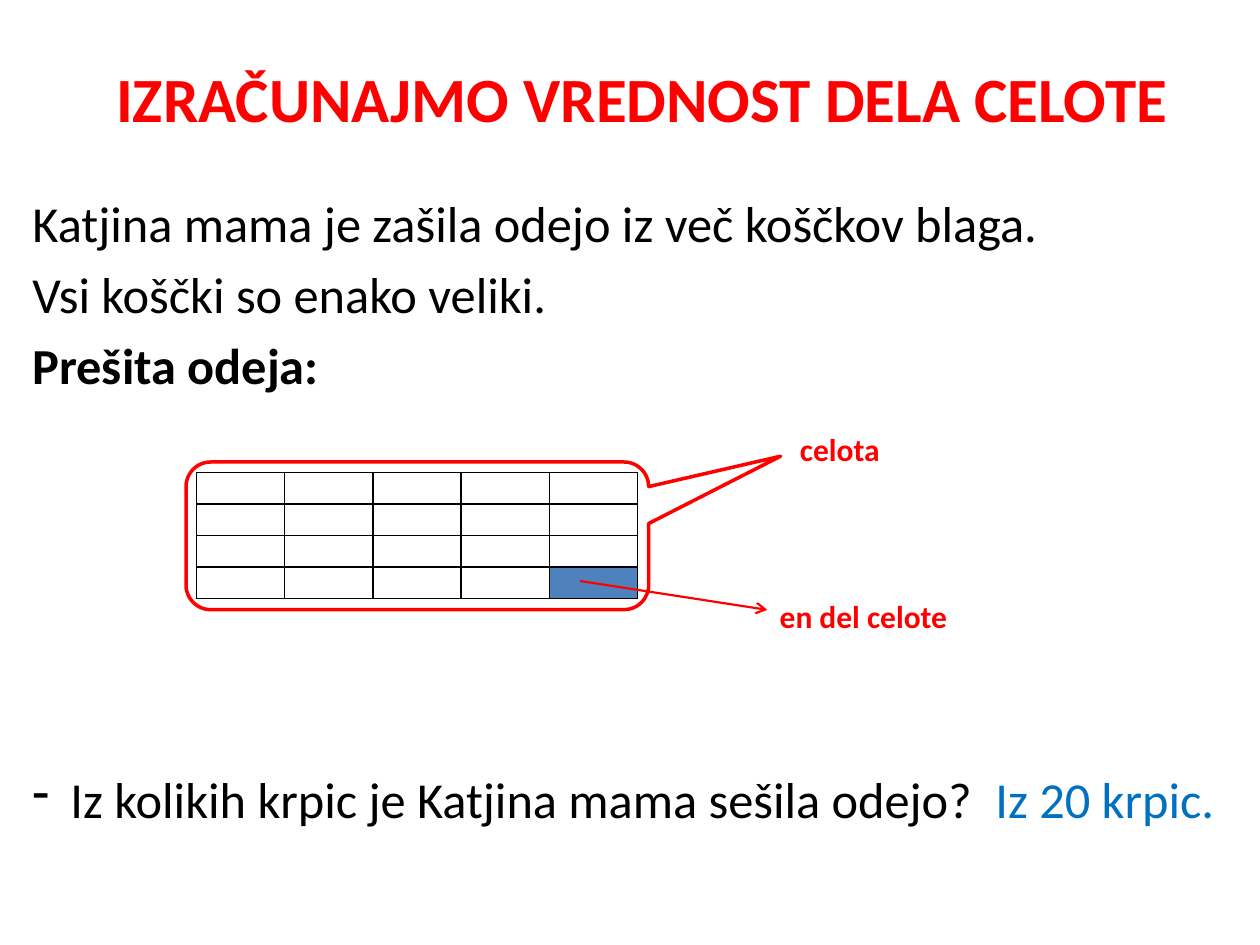
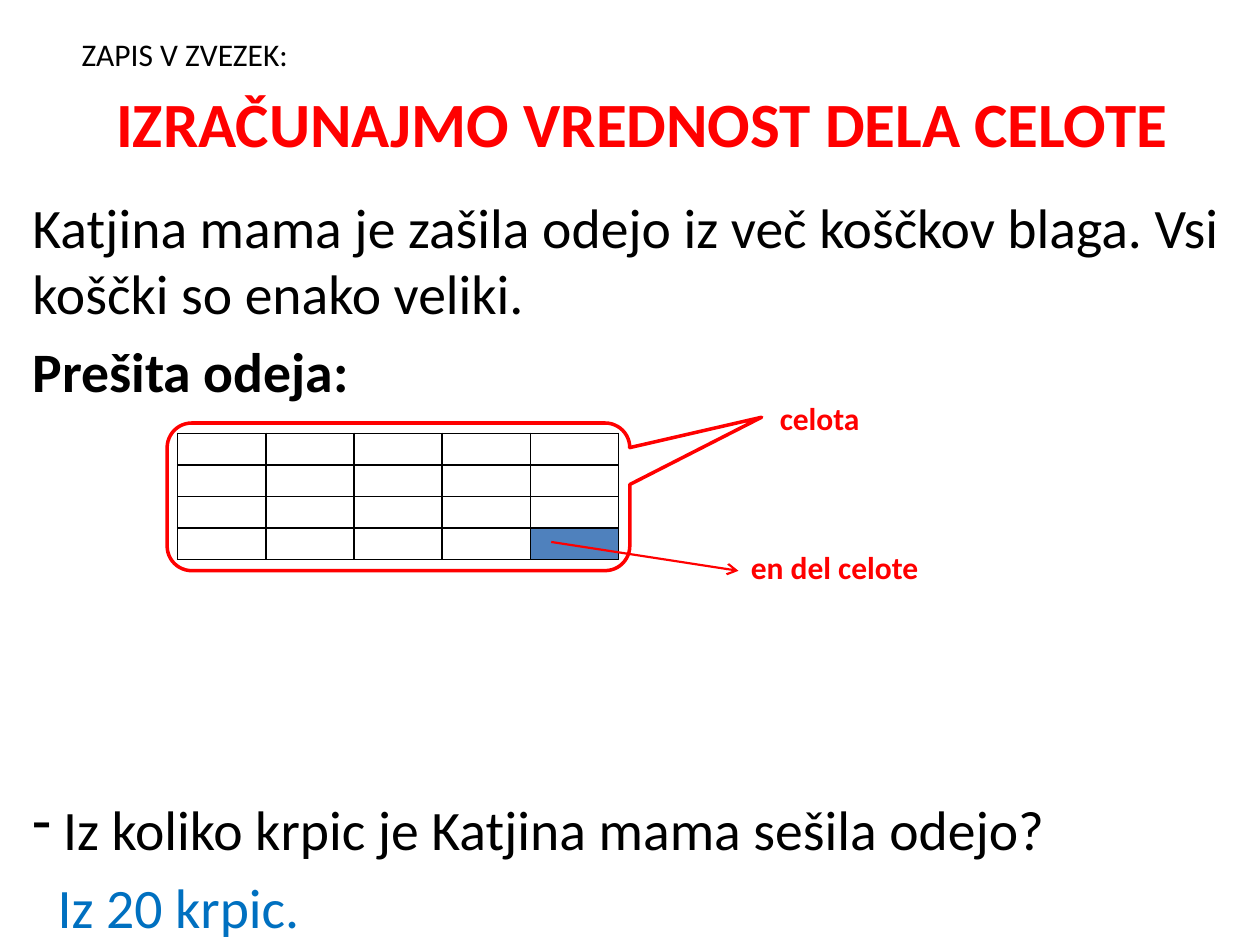
from lxml.etree import SubElement
from pptx import Presentation
from pptx.dml.color import RGBColor
from pptx.enum.shapes import MSO_CONNECTOR, MSO_SHAPE
from pptx.enum.text import MSO_ANCHOR, PP_ALIGN
from pptx.oxml.ns import qn
from pptx.util import Pt

RED = RGBColor(0xFF, 0x00, 0x00)
BLACK = RGBColor(0x00, 0x00, 0x00)
ANSWER_BLUE = RGBColor(0x00, 0x70, 0xC0)
PATCH_BLUE = RGBColor(0x4F, 0x81, 0xBD)
FONT = "Calibri"
TITLE = "IZRAČUNAJMO VREDNOST DELA CELOTE"
ROWS, COLUMNS = 4, 5
PATCH_WIDTH, PATCH_HEIGHT = 50.4, 18
BODY_LEFT, BODY_TOP, BODY_WIDTH = 11.5, 106.5, 698


def write_text(paragraph, text, size=18, color=BLACK, bold=False):
    run = paragraph.add_run()
    run.text = text
    run.font.name = FONT
    run.font.size = Pt(size)
    run.font.color.rgb = color
    run.font.bold = bold


def add_box(slide, left, top, width, height):
    box = slide.shapes.add_textbox(Pt(left), Pt(top), Pt(width), Pt(height))
    box.text_frame.word_wrap = True
    return box.text_frame


PAGES = [
    {
        "title": (16.5, 78.5),
        "size": 28.8,
        "story": ["Katjina mama je zašila odejo iz več koščkov blaga.",
                  "Vsi koščki so enako veliki."],
        "question": "Iz kolikih krpic je Katjina mama sešila odejo?",
        "question_top": 435.5,
        "question_indent": 21.7,
        "answer_inline": True,
        "quilt": (112.3, 270),
        "whole_label": (450, 242),
        "part_label": (438.5, 337.7),
    },
    {
        "title": (44.6, 50.4),
        "size": 31.8,
        "story": ["Katjina mama je zašila odejo iz več koščkov blaga. "
                  "Vsi koščki so enako veliki."],
        "question": "Iz koliko krpic je Katjina mama sešila odejo?",
        "question_top": 450.5,
        "question_indent": 17.5,
        "answer_inline": False,
        "quilt": (101.5, 247.7),
        "whole_label": (438.5, 224.6),
        "part_label": (422, 309.6),
    },
]

presentation = Presentation()
presentation.slide_width = Pt(720)
presentation.slide_height = Pt(540)

for page in PAGES:
    slide = presentation.slides.add_slide(presentation.slide_layouts[5])
    size = page["size"]

    title = slide.shapes.title
    title_top, title_height = page["title"]
    title.left, title.top = Pt(39.6), Pt(title_top)
    title.width, title.height = Pt(654.5), Pt(title_height)
    title.text_frame.vertical_anchor = MSO_ANCHOR.MIDDLE
    title_paragraph = title.text_frame.paragraphs[0]
    title_paragraph.alignment = PP_ALIGN.CENTER
    write_text(title_paragraph, TITLE, size=36, color=RED, bold=True)

    story = add_box(slide, BODY_LEFT, BODY_TOP, BODY_WIDTH, 130)
    paragraph = story.paragraphs[0]
    for sentence in page["story"]:
        write_text(paragraph, sentence, size=size)
        paragraph = story.add_paragraph()
        paragraph.space_before = Pt(size * 0.2)
    write_text(paragraph, "Prešita odeja:", size=size, bold=True)

    question = add_box(slide, BODY_LEFT, page["question_top"], BODY_WIDTH, 50)
    paragraph = question.paragraphs[0]
    properties = paragraph._p.get_or_add_pPr()
    properties.set("marL", str(Pt(page["question_indent"])))
    properties.set("indent", str(-Pt(page["question_indent"])))
    SubElement(properties, qn("a:buChar"), char="-")
    write_text(paragraph, page["question"], size=size)
    if page["answer_inline"]:
        write_text(paragraph, "  ", size=size)
    else:
        paragraph = question.add_paragraph()
        paragraph.space_before = Pt(size * 0.2)
        paragraph._p.get_or_add_pPr().set("marL", str(Pt(14.4)))
    write_text(paragraph, "Iz 20 krpic.", size=size, color=ANSWER_BLUE)

    quilt_left, quilt_top = page["quilt"]
    quilt = slide.shapes.add_table(
        ROWS, COLUMNS, Pt(quilt_left), Pt(quilt_top),
        Pt(COLUMNS * PATCH_WIDTH), Pt(ROWS * PATCH_HEIGHT)).table
    quilt.first_row = quilt.horz_banding = False
    for column in quilt.columns:
        column.width = Pt(PATCH_WIDTH)
    for row in quilt.rows:
        row.height = Pt(PATCH_HEIGHT)
    for cell in quilt.iter_cells():
        cell.margin_top = cell.margin_bottom = 0
        SubElement(cell.text_frame.paragraphs[0]._p, qn("a:endParaRPr"), sz="800")
        cell_properties = cell._tc.get_or_add_tcPr()
        for side in ("a:lnL", "a:lnR", "a:lnT", "a:lnB"):
            border = SubElement(cell_properties, qn(side), w=str(Pt(1)))
            border_fill = SubElement(border, qn("a:solidFill"))
            SubElement(border_fill, qn("a:srgbClr"), val=str(BLACK))
        cell.fill.background()
    colored_patch = quilt.cell(ROWS - 1, COLUMNS - 1)
    colored_patch.fill.solid()
    colored_patch.fill.fore_color.rgb = PATCH_BLUE

    callout = slide.shapes.add_shape(
        MSO_SHAPE.ROUNDED_RECTANGULAR_CALLOUT,
        Pt(quilt_left - 6), Pt(quilt_top - 6), Pt(264.4), Pt(84.4))
    callout.shadow.inherit = False
    callout.fill.background()
    callout.line.color.rgb = RED
    callout.line.width = Pt(2)
    for index, value in enumerate((0.785, -0.539, 0.167)):
        callout.adjustments[index] = value

    whole_label = add_box(slide, *page["whole_label"], 73.5, 29)
    write_text(whole_label.paragraphs[0], "celota", color=RED, bold=True)

    part_left, part_top = page["part_label"]
    arrow_top = quilt_top + 62
    arrow = slide.shapes.add_connector(
        MSO_CONNECTOR.STRAIGHT, Pt(part_left - 107), Pt(arrow_top),
        Pt(part_left), Pt(arrow_top + 16.5))
    arrow.line.color.rgb = RED
    arrow.line.width = Pt(1.25)
    SubElement(arrow.line._get_or_add_ln(), qn("a:tailEnd"), type="arrow")
    SubElement(arrow._element.spPr, qn("a:effectLst"))

    part_label = add_box(slide, part_left, part_top, 124, 29)
    write_text(part_label.paragraphs[0], "en del celote", color=RED, bold=True)

notebook_label = add_box(slide, 39.6, 16.5, 247.5, 29)
write_text(notebook_label.paragraphs[0], "ZAPIS V ZVEZEK:")

presentation.save("out.pptx")
